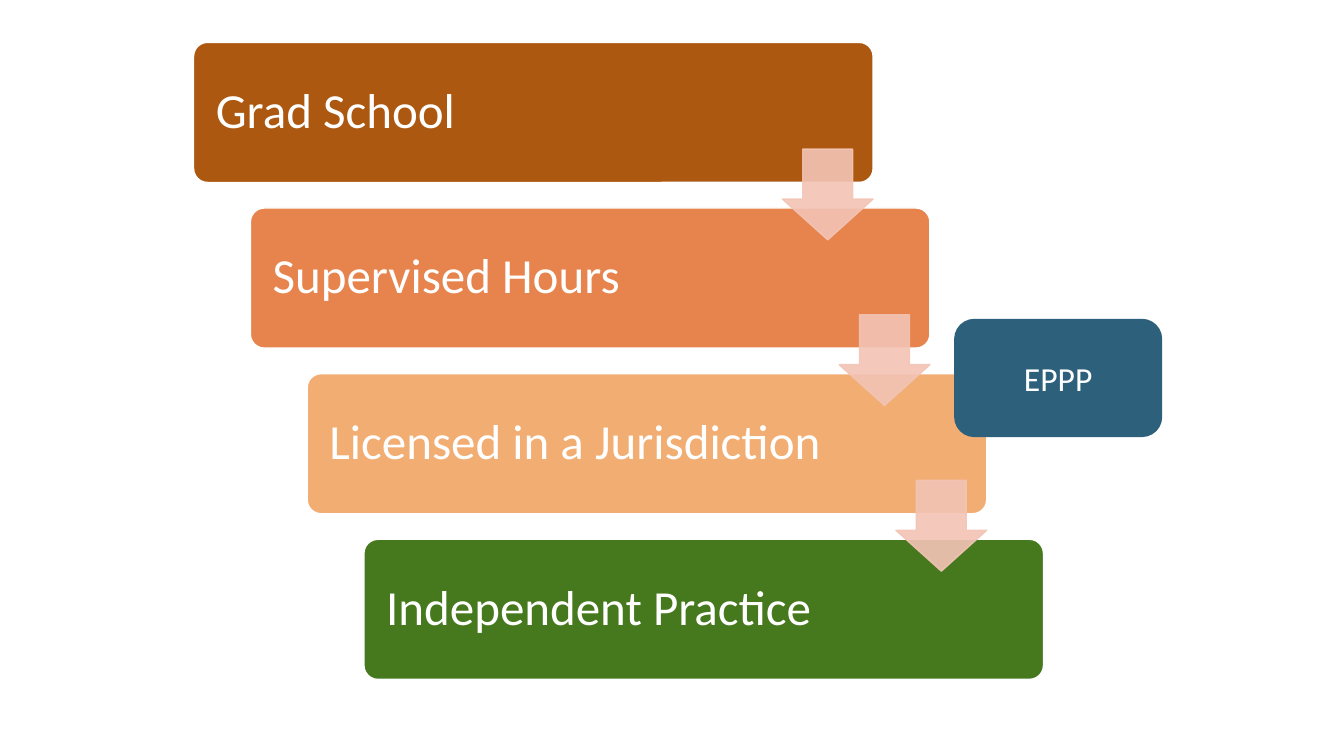
import dataclasses

import lxml.etree
import pptx
import pptx.dml.color
import pptx.enum.shapes
import pptx.enum.text
import pptx.oxml.ns
import pptx.util

Inches = pptx.util.Inches
Shapes = pptx.enum.shapes.MSO_SHAPE
Align = pptx.enum.text.PP_ALIGN


@dataclasses.dataclass(frozen=True)
class Theme:
    """Colours, font and type sizes of the slide."""

    font: str = "Calibri"
    white: str = "FFFFFF"
    arrow: str = "F3C4B5"
    exam: str = "2D617B"
    stages: tuple = ("AC5810", "E7844D", "F2AD73", "46791D")
    stage_size: int = 35
    exam_size: int = 24
    arrow_opacity: int = 90


class StaircaseSlide:
    """Draws the elements of a descending staircase process."""

    def __init__(self, slide, theme):
        """Keep the slide and its theme."""
        self.slide = slide
        self.theme = theme

    def add_block(self, preset, left, top, width, height, fill, line):
        """Add a filled and outlined preset shape."""
        shape = self.slide.shapes.add_shape(
            preset, Inches(left), Inches(top), Inches(width), Inches(height)
        )
        shape.shadow.inherit = False
        shape.fill.solid()
        shape.fill.fore_color.rgb = pptx.dml.color.RGBColor.from_string(fill)
        shape.line.color.rgb = pptx.dml.color.RGBColor.from_string(line)
        shape.line.width = pptx.util.Pt(1)
        return shape

    def add_label(self, shape, text, size, alignment):
        """Set one vertically centred paragraph in a shape."""
        frame = shape.text_frame
        frame.word_wrap = True
        frame.vertical_anchor = pptx.enum.text.MSO_ANCHOR.MIDDLE
        paragraph = frame.paragraphs[0]
        paragraph.text = text
        paragraph.alignment = alignment
        paragraph.font.name = self.theme.font
        paragraph.font.size = pptx.util.Pt(size)
        paragraph.font.color.rgb = pptx.dml.color.RGBColor.from_string(self.theme.white)
        return paragraph

    def add_stage(self, left, top, width, height, text, fill):
        """Add one labelled bar of the staircase."""
        bar = self.add_block(
            Shapes.ROUNDED_RECTANGLE, left, top, width, height, fill, self.theme.white
        )
        bar.adjustments[0] = 0.1
        bar.text_frame.margin_left = Inches(0.18)
        paragraph = self.add_label(bar, text, self.theme.stage_size, Align.LEFT)
        paragraph.line_spacing = 0.9

    def add_arrow(self, left, top, size):
        """Add a translucent arrow leading to the next bar."""
        colour = self.theme.arrow
        arrow = self.add_block(Shapes.DOWN_ARROW, left, top, size, size, colour, colour)
        arrow.adjustments[0] = 0.55
        arrow.adjustments[1] = 0.45
        for element in arrow.element.iter(pptx.oxml.ns.qn("a:srgbClr")):
            alpha = lxml.etree.SubElement(element, pptx.oxml.ns.qn("a:alpha"))
            alpha.set("val", str(self.theme.arrow_opacity * 1000))

    def add_exam(self, left, top, width, height, text):
        """Add the exam box beside the staircase."""
        colour = self.theme.exam
        box = self.add_block(
            Shapes.ROUNDED_RECTANGLE, left, top, width, height, colour, colour
        )
        self.add_label(box, text, self.theme.exam_size, Align.CENTER)


def main():
    """Build and save the slide."""
    presentation = pptx.Presentation()
    presentation.slide_width = Inches(13.33)
    presentation.slide_height = Inches(7.5)
    slide = presentation.slides.add_slide(presentation.slide_layouts[6])
    theme = Theme()
    staircase = StaircaseSlide(slide, theme)

    stages = (
        "Grad School",
        "Supervised Hours",
        "Licensed in a Jurisdiction",
        "Independent Practice",
    )
    bar_width, bar_height, arrow_size = 6.74, 1.39, 0.9
    steps = len(stages) - 1
    corners = [
        (1.92 + 1.69 * index / steps, 0.42 + 4.93 * index / steps)
        for index in range(len(stages))
    ]
    for (left, top), text, fill in zip(corners, stages, theme.stages):
        staircase.add_stage(left, top, bar_width, bar_height, text, fill)
    for left, top in corners[:-1]:
        staircase.add_arrow(left + bar_width - arrow_size, top + 1.06, arrow_size)
    staircase.add_exam(9.47, 3.17, 2.05, 1.16, "EPPP")

    presentation.save("out.pptx")


if __name__ == "__main__":
    main()
